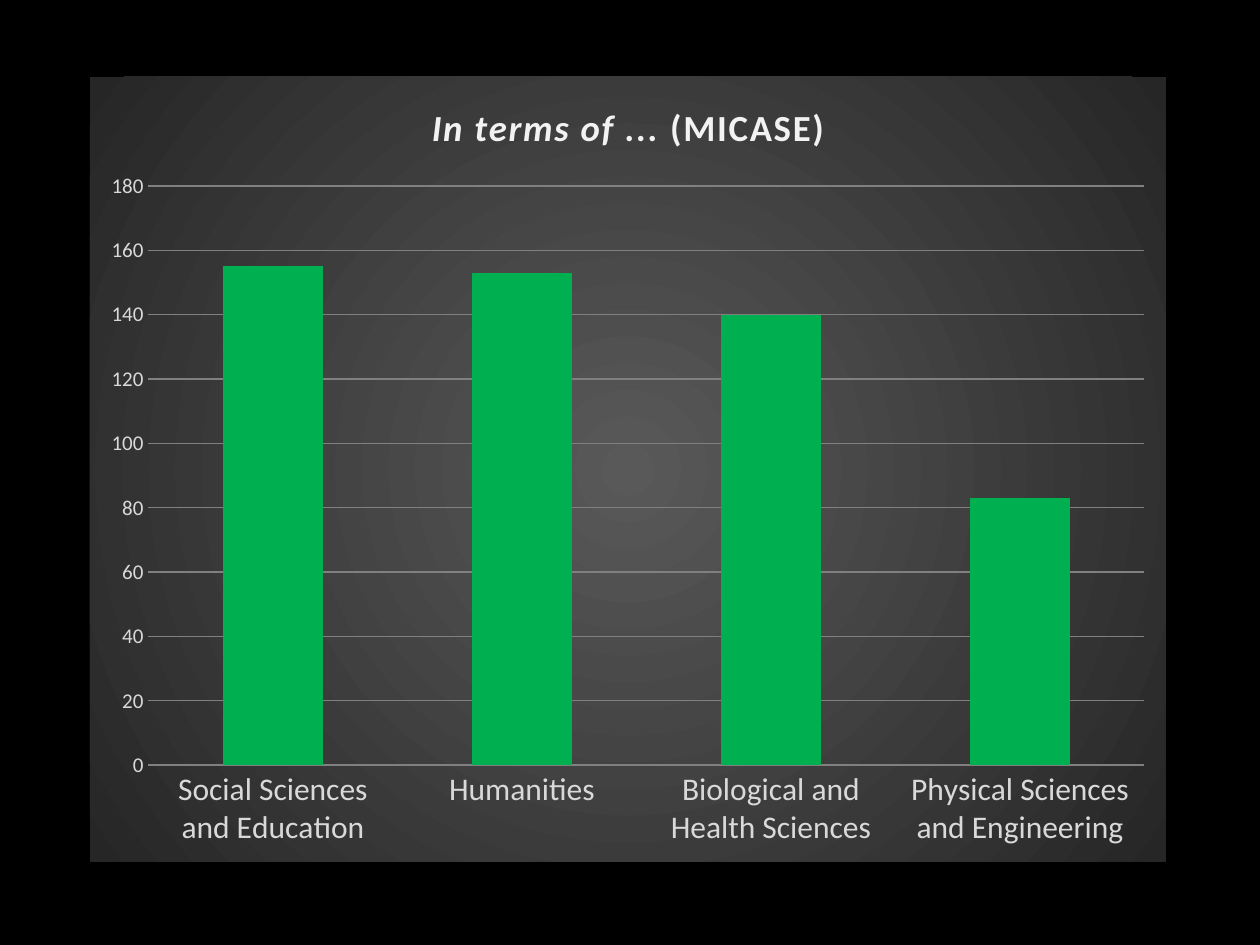
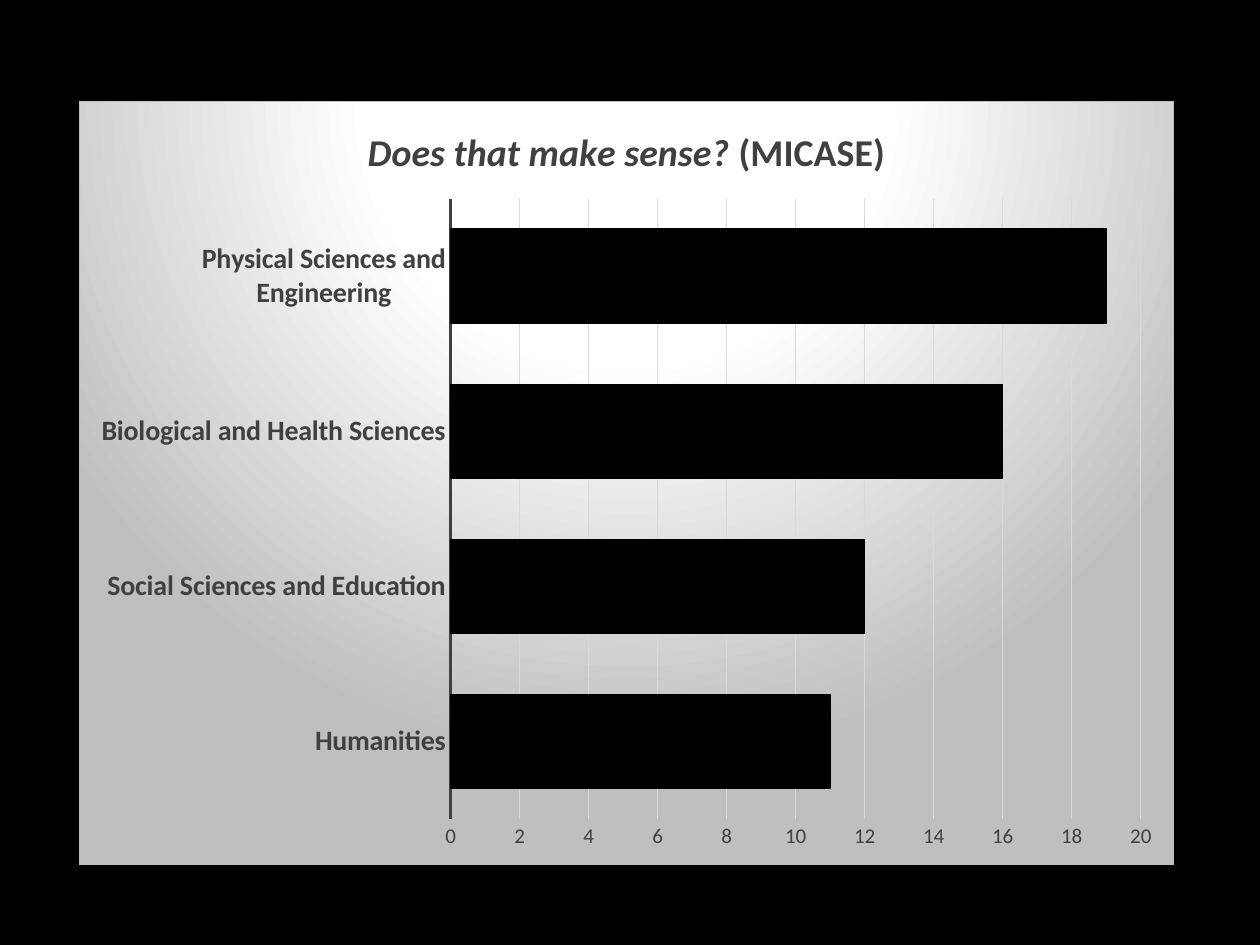
from dataclasses import dataclass

from lxml.etree import SubElement
from pptx import Presentation
from pptx.chart.axis import CategoryAxis, ValueAxis
from pptx.chart.chart import Chart
from pptx.chart.data import CategoryChartData
from pptx.dml.color import RGBColor
from pptx.dml.line import LineFormat
from pptx.enum.chart import XL_CHART_TYPE, XL_TICK_MARK
from pptx.oxml import parse_xml
from pptx.oxml.ns import nsdecls, qn
from pptx.presentation import Presentation as Deck
from pptx.text.text import Font
from pptx.util import Emu, Pt

PX_PER_INCH = 126
BLANK_LAYOUT = 6


@dataclass(frozen=True)
class Theme:
    font: str = "Calibri"
    background: str = "000000"
    base_text: str = "FFFFFF"
    dark_title: str = "F2F2F2"
    dark_label: str = "D9D9D9"
    dark_grid: str = "808080"
    light_text: str = "404040"
    light_grid: str = "D9D9D9"
    light_border: str = "BFBFBF"
    green: str = "00B050"
    black: str = "000000"
    base_size: float = 10
    value_size: float = 12
    line_width: float = 0.75
    axis_width: float = 1.5


THEME = Theme()


@dataclass(frozen=True)
class Gradient:
    stops: tuple[tuple[int, str], ...]  # percent, colour
    top: int
    bottom: int


@dataclass(frozen=True)
class ChartStyle:
    title_color: str
    title_size: float
    title_spacing: int  # hundredths of a point
    label_color: str
    label_size: float
    label_bold: bool
    grid_color: str
    bar_color: str
    bar_outlined: bool
    gap_width: int
    gradient: Gradient
    axis_color: str | None = None
    border_color: str | None = None


@dataclass(frozen=True)
class ChartSlide:
    phrase: str
    box: tuple[int, int, int, int]  # left, top, width, height in px
    kind: XL_CHART_TYPE
    counts: dict[str, int]
    maximum: int
    step: int
    style: ChartStyle


HUMANITIES = "Humanities"
SOCIAL = "Social Sciences and Education"
BIOLOGICAL = "Biological and Health Sciences"
PHYSICAL = "Physical Sciences and Engineering"
CORPUS = " (MICASE)"

DARK = ChartStyle(
    title_color=THEME.dark_title, title_size=21, title_spacing=100,
    label_color=THEME.dark_label, label_size=18, label_bold=False,
    grid_color=THEME.dark_grid, bar_color=THEME.green, bar_outlined=False, gap_width=150,
    gradient=Gradient(((0, "595959"), (100, "262626")), top=50, bottom=50),
)
LIGHT = ChartStyle(
    title_color=THEME.light_text, title_size=21.6, title_spacing=0,
    label_color=THEME.light_text, label_size=16, label_bold=True,
    grid_color=THEME.light_grid, bar_color=THEME.black, bar_outlined=True, gap_width=65,
    gradient=Gradient(((0, "FFFFFF"), (39, "FFFFFF"), (100, "BFBFBF")), top=-80, bottom=180),
    axis_color=THEME.light_text, border_color=THEME.light_border,
)

CHART_SLIDES = (
    ChartSlide("In terms of ...", (90, 77, 1076, 785), XL_CHART_TYPE.COLUMN_CLUSTERED,
               {SOCIAL: 155, HUMANITIES: 153, BIOLOGICAL: 140, PHYSICAL: 83},
               maximum=180, step=20, style=DARK),
    ChartSlide("Does that make sense?", (79, 101, 1095, 764), XL_CHART_TYPE.BAR_CLUSTERED,
               {HUMANITIES: 11, SOCIAL: 12, BIOLOGICAL: 16, PHYSICAL: 19},
               maximum=20, step=2, style=LIGHT),
)


def px(length: int) -> Emu:
    return Emu(round(length * 914400 / PX_PER_INCH))


def format_font(font: Font, *, size: float, color: str,
                bold: bool = False, italic: bool = False) -> None:
    font.name = THEME.font
    font.size = Pt(size)
    font.bold = bold
    font.italic = italic
    font.color.rgb = RGBColor.from_string(color)


def format_line(line: LineFormat, color: str | None, width: float = THEME.line_width) -> None:
    if color is None:
        line.fill.background()
        return
    line.color.rgb = RGBColor.from_string(color)
    line.width = Pt(width)


def add_text(paragraph, text: str, *, size: float, color: str, bold: bool = False,
             italic: bool = False, spacing: int = 0) -> None:
    run = paragraph.add_run()
    run.text = text
    format_font(run.font, size=size, color=color, bold=bold, italic=italic)
    if spacing:
        run._r.get_or_add_rPr().set("spc", str(spacing))


def fill_chart_area(chart: Chart, gradient: Gradient, border_color: str | None) -> None:
    """Give the chart area a circular gradient and an optional border."""
    properties = parse_xml(f"<c:spPr {nsdecls('c', 'a')}/>")
    fill = SubElement(properties, qn("a:gradFill"))
    stops = SubElement(fill, qn("a:gsLst"))
    for percent, color in gradient.stops:
        stop = SubElement(stops, qn("a:gs"), pos=str(percent * 1000))
        SubElement(stop, qn("a:srgbClr"), val=color)
    circle = SubElement(fill, qn("a:path"), {"path": "circle"})
    SubElement(circle, qn("a:fillToRect"), l="50000", r="50000",
               t=str(gradient.top * 1000), b=str(gradient.bottom * 1000))
    line = SubElement(properties, qn("a:ln"), w=str(Pt(THEME.line_width)))
    if border_color:
        line_fill = SubElement(line, qn("a:solidFill"))
        SubElement(line_fill, qn("a:srgbClr"), val=border_color)
    else:
        SubElement(line, qn("a:noFill"))
    chart.element.find(qn("c:chart")).addnext(properties)


def format_axis(axis: CategoryAxis | ValueAxis, *, size: float, color: str,
                bold: bool = False, line_color: str | None = None) -> None:
    axis.major_tick_mark = axis.minor_tick_mark = XL_TICK_MARK.NONE
    format_font(axis.tick_labels.font, size=size, color=color, bold=bold)
    format_line(axis.format.line, line_color, THEME.axis_width)


def format_axes(chart: Chart, content: ChartSlide) -> None:
    style = content.style
    format_axis(chart.category_axis, size=style.label_size, color=style.label_color,
                bold=style.label_bold, line_color=style.axis_color)
    chart.category_axis.has_major_gridlines = False
    values = chart.value_axis
    format_axis(values, size=THEME.value_size, color=style.label_color)
    values.minimum_scale = 0
    values.maximum_scale = content.maximum
    values.major_unit = content.step
    values.has_major_gridlines = True
    format_line(values.major_gridlines.format.line, style.grid_color)


def add_chart_title(chart: Chart, phrase: str, style: ChartStyle) -> None:
    chart.has_title = True
    chart.chart_title.include_in_layout = False
    paragraph = chart.chart_title.text_frame.paragraphs[0]
    for text, italic in ((phrase, True), (CORPUS, False)):
        add_text(paragraph, text, size=style.title_size, color=style.title_color,
                 bold=True, italic=italic, spacing=style.title_spacing)


def format_bars(chart: Chart, style: ChartStyle) -> None:
    plot = chart.plots[0]
    plot.gap_width = style.gap_width
    plot.vary_by_categories = False
    bars = plot.series[0]
    bars.format.fill.solid()
    bars.format.fill.fore_color.rgb = RGBColor.from_string(style.bar_color)
    format_line(bars.format.line, style.bar_color if style.bar_outlined else None)


def add_chart_slide(presentation: Deck, content: ChartSlide) -> None:
    slide = presentation.slides.add_slide(presentation.slide_layouts[BLANK_LAYOUT])
    slide.background.fill.solid()
    slide.background.fill.fore_color.rgb = RGBColor.from_string(THEME.background)

    # Chart data and frame
    data = CategoryChartData()
    data.categories = list(content.counts)
    data.add_series("Series 1", list(content.counts.values()))
    chart = slide.shapes.add_chart(content.kind, *map(px, content.box), data).chart

    # Chart format
    chart.has_legend = False
    format_font(chart.font, size=THEME.base_size, color=THEME.base_text)
    fill_chart_area(chart, content.style.gradient, content.style.border_color)
    add_chart_title(chart, content.phrase, content.style)
    format_axes(chart, content)
    format_bars(chart, content.style)


def main() -> None:
    presentation = Presentation()
    presentation.slide_width = px(1260)
    presentation.slide_height = px(945)
    for content in CHART_SLIDES:
        add_chart_slide(presentation, content)
    presentation.save("out.pptx")


if __name__ == "__main__":
    main()
